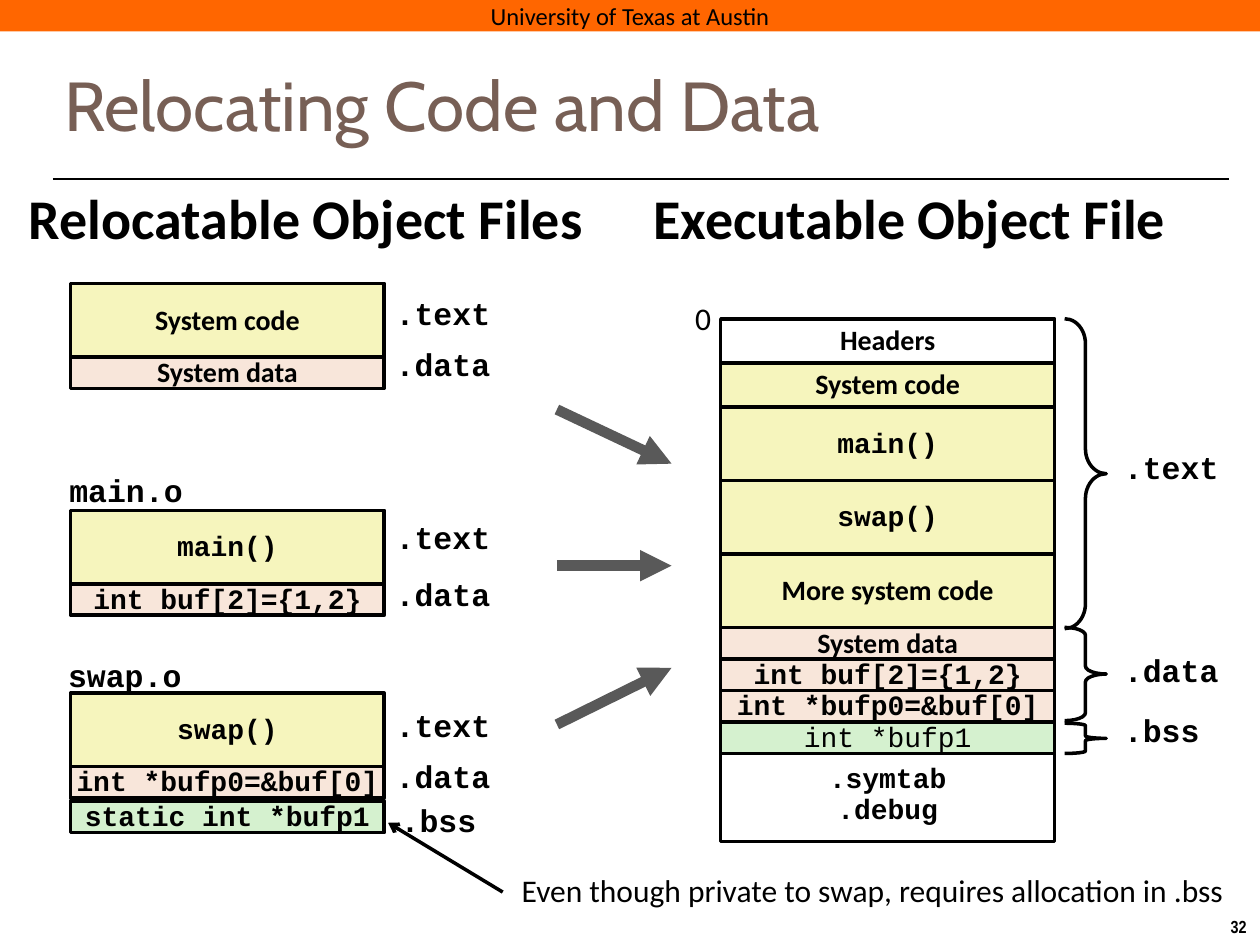
from dataclasses import dataclass

from lxml.etree import SubElement
from pptx import Presentation
from pptx.dml.color import RGBColor
from pptx.enum.shapes import MSO_CONNECTOR as Connector, MSO_SHAPE as Preset
from pptx.enum.text import MSO_ANCHOR as Anchor, PP_ALIGN as Align
from pptx.oxml.ns import qn
from pptx.slide import Slide
from pptx.util import Inches, Pt

COLUMNS, ROWS = 100, 75
WIDTH, HEIGHT = Inches(10), Inches(7.5)
SANS, MONO = "Calibri", "Courier New"
BLACK, WHITE, GRAY = "000000", "FFFFFF", "595959"
CODE, DATA, BSS = "F6F5BD", "F8E6DA", "D5F1CF"
ORANGE, BROWN = "FF6600", "775F55"
TALL, MEDIUM, SHORT = 5.83, 3.5, 2.5


@dataclass(frozen=True)
class Block:
    """One section of an object file; gap is the distance to the block above."""
    text: str
    height: float
    fill: str
    font: str = MONO
    bold: bool = True
    gap: float = 0


@dataclass(frozen=True)
class ObjectFile:
    """A stack of blocks, placed by its top left corner."""
    left: float
    top: float
    width: float
    blocks: tuple[Block, ...]


@dataclass(frozen=True)
class Label:
    """Free text in a box on the grid."""
    text: str
    left: float
    top: float
    width: float
    height: float = 3.9
    font: str = MONO
    size: float = 18
    bold: bool = True


@dataclass(frozen=True)
class Brace:
    """A right brace with the curvature of its ends."""
    top: float
    height: float
    curve: float


@dataclass(frozen=True)
class Line:
    """A straight line, with an arrowhead at its end if one is named."""
    start: tuple[float, float]
    end: tuple[float, float]
    color: str = GRAY
    weight: float = 6
    head: str = "triangle"


SYSTEM_DATA = Block("System data", SHORT, DATA, SANS)
SYSTEM_CODE = Block("System code", TALL, CODE, SANS)
MAIN = Block("main()", TALL, CODE)
SWAP = Block("swap()", TALL, CODE)
BUFFER = Block("int buf[2]={1,2}", SHORT, DATA)
POINTER = Block("int *bufp0=&buf[0]", SHORT, DATA)

FILES = (
    ObjectFile(5.6, 22.5, 24.9, (SYSTEM_CODE, SYSTEM_DATA)),
    ObjectFile(5.6, 40.5, 24.9, (MAIN, BUFFER)),
    ObjectFile(5.6, 55, 24.9, (
        SWAP, POINTER, Block("static int *bufp1", SHORT, BSS, gap=0.25))),
    ObjectFile(57.2, 25.3, 26.5, (
        Block("Headers", MEDIUM, WHITE, SANS),
        Block("System code", MEDIUM, CODE, SANS),
        MAIN, SWAP, Block("More system code", TALL, CODE, SANS),
        SYSTEM_DATA, BUFFER, POINTER,
        Block("int *bufp1", SHORT, BSS, bold=False),
        Block(".symtab\n.debug", 7.5, WHITE, gap=-0.5))),
)
SECTION_TOPS = {
    30.4: ((".text", 23.1), (".data", 27.1), (".text", 40.9),
           (".data", 45.4), (".text", 55.8), (".data", 59.8)),
    88.2: ((".text", 35.3), (".data", 51.4)),
}
LABELS = (
    Label("Relocatable Object Files", 1.1, 14.3, 46.4, 6.3, SANS, 32),
    Label("Executable Object File", 50.7, 14.3, 43, 6.3, SANS, 32),
    Label("main.o", 4.5, 37.1, 11),
    Label("swap.o", 4.4, 51.8, 11),
    Label("0", 54.1, 23.4, 3.4, 4, SANS, bold=False),
    *(Label(text, left, top, 9.5)
      for left, sections in SECTION_TOPS.items() for text, top in sections),
    Label(".bss", 88.2, 56.2, 8),
    Label(".bss", 30.8, 63.3, 8),
    Label("Even though private to swap, requires allocation in .bss",
          39.5, 68.8, 59.5, 4, SANS, bold=False),
    Label("32", 96.6, 72.3, 3.4, 2.7, "Arial Narrow", 10),
)
BRACES = (Brace(25.3, 24.6, 0.6), Brace(49.8, 7.4, 0.19), Brace(57.4, 2.4, 0.08))
LINES = (
    Line((4.2, 14.2), (97.5, 14.2), BLACK, 1.5, ""),
    Line((44.2, 32.5), (53.3, 36.8)),
    Line((44.2, 44.9), (53.3, 44.9)),
    Line((44.2, 57.5), (53.3, 53)),
    Line((39.9, 70.8), (30.8, 65.3), BLACK, 2, "arrow"),
)


def color_of(value: str) -> RGBColor:
    """Turn a hex string into a colour."""
    return RGBColor.from_string(value)


def grid(x: float, y: float) -> tuple[int, int]:
    """Turn columns and rows into slide lengths."""
    return round(x * WIDTH / COLUMNS), round(y * HEIGHT / ROWS)


def write_text(shape, text: str, *, font: str = SANS, size: float = 16,
               color: str = BLACK, bold: bool = False, align=Align.CENTER,
               anchor=Anchor.MIDDLE, spacing: float | None = None) -> None:
    """Write one paragraph for each line of text."""
    frame = shape.text_frame
    frame.word_wrap = False
    frame.vertical_anchor = anchor
    for index, line in enumerate(text.split("\n")):
        paragraph = frame.add_paragraph() if index else frame.paragraphs[0]
        paragraph.alignment = align
        paragraph.line_spacing = spacing or (0.94 if font == MONO else 0.98)
        run = paragraph.add_run()
        run.text = line
        run.font.name, run.font.size, run.font.bold = font, Pt(size), bold
        run.font.color.rgb = color_of(color)


def add_preset(slide: Slide, preset: Preset, left: float, top: float, width: float,
               height: float, fill: str = "", line: str = BLACK):
    """Add a preset shape on the grid; an empty colour means none."""
    shape = slide.shapes.add_shape(preset, *grid(left, top), *grid(width, height))
    shape.shadow.inherit = False
    for part, color in ((shape.fill, fill), (shape.line.fill, line)):
        if color:
            part.solid()
            part.fore_color.rgb = color_of(color)
        else:
            part.background()
    if line:
        shape.line.width = Pt(2)
    return shape


def add_file(slide: Slide, file: ObjectFile) -> None:
    """Stack the blocks of a file, upper ones in front."""
    bottom = file.top + sum(block.gap + block.height for block in file.blocks)
    for block in reversed(file.blocks):
        top = bottom - block.height
        shape = add_preset(slide, Preset.RECTANGLE, file.left, top,
                           file.width, block.height, block.fill)
        write_text(shape, block.text, font=block.font, bold=block.bold)
        bottom = top - block.gap


def add_label(slide: Slide, label: Label) -> None:
    """Add a text box for a label."""
    box = slide.shapes.add_textbox(*grid(label.left, label.top),
                                   *grid(label.width, label.height))
    write_text(box, label.text, font=label.font, size=label.size,
               bold=label.bold, anchor=Anchor.TOP)


def add_line(slide: Slide, line: Line) -> None:
    """Add a connector without shadow."""
    connector = slide.shapes.add_connector(
        Connector.STRAIGHT, *grid(*line.start), *grid(*line.end))
    connector.line.color.rgb = color_of(line.color)
    connector.line.width = Pt(line.weight)
    if line.head:
        SubElement(connector.line._get_or_add_ln(), qn("a:tailEnd"), type=line.head)
    SubElement(connector._element.spPr, qn("a:effectLst"))


def main() -> None:
    """Build and save the slide."""
    presentation = Presentation()
    presentation.slide_width, presentation.slide_height = WIDTH, HEIGHT
    slide = presentation.slides.add_slide(presentation.slide_layouts[6])
    banner = add_preset(slide, Preset.RECTANGLE, 0, 0, COLUMNS, 2.5, ORANGE, "")
    write_text(banner, "University of Texas at Austin", size=14, spacing=1)
    title = slide.shapes.add_textbox(*grid(4.1, 5.1), *grid(83.1, 6.3))
    write_text(title, "Relocating Code and Data", font="Cabin", size=39.6,
               color=BROWN, align=Align.LEFT, spacing=1)
    for file in FILES:
        add_file(slide, file)
    for brace in BRACES:
        shape = add_preset(slide, Preset.RIGHT_BRACE, 84.5, brace.top, 3.3, brace.height)
        shape.adjustments[0] = brace.curve
    for label in LABELS:
        add_label(slide, label)
    for line in LINES:
        add_line(slide, line)
    presentation.save("out.pptx")


if __name__ == "__main__":
    main()
